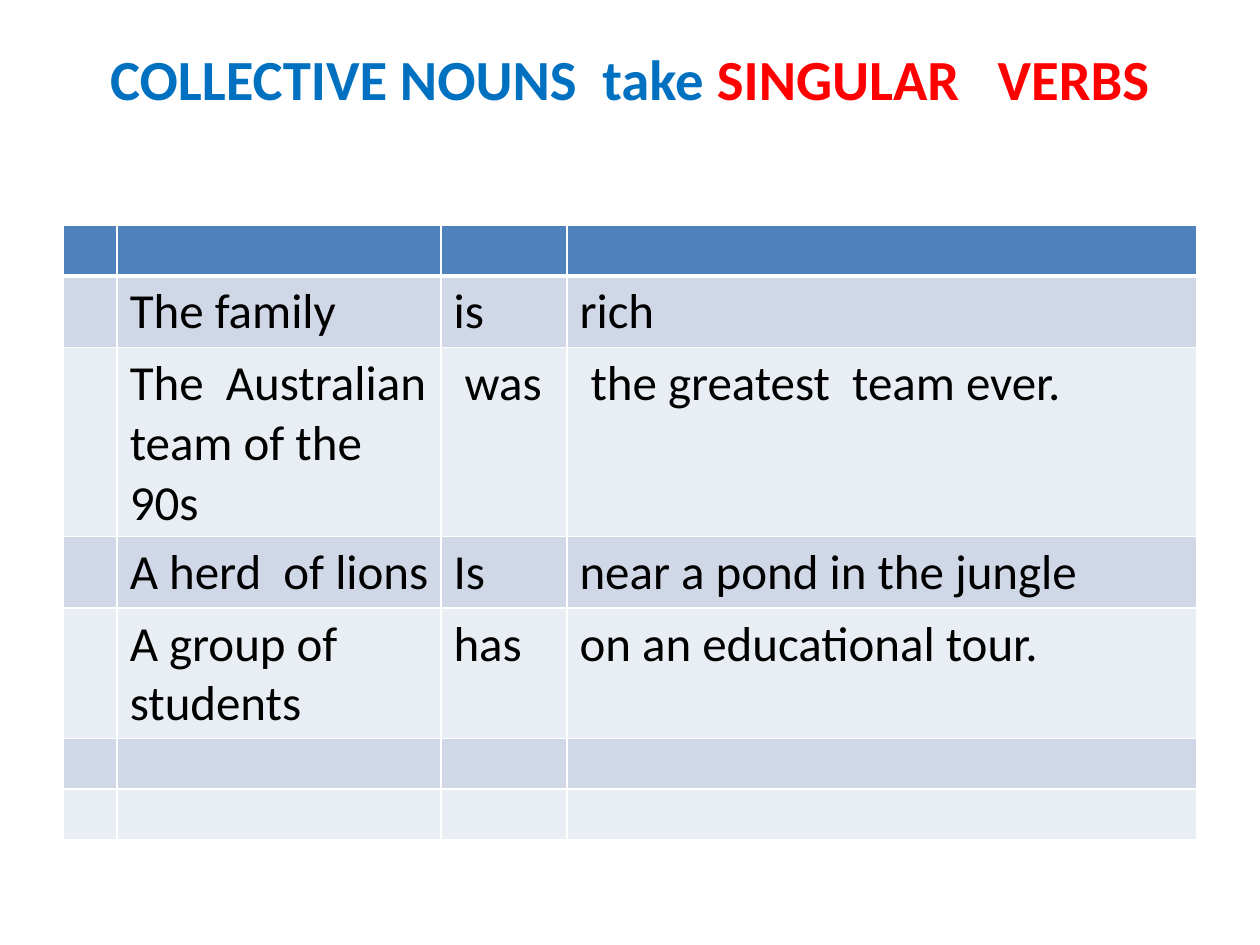
import pptx
import pptx.dml.color
import pptx.enum.text
import pptx.oxml
import pptx.oxml.ns
import pptx.util
from lxml import etree

Pt = pptx.util.Pt

COLOURS = {
    "subject": "0070C0",
    "verb": "FF0000",
    "header": "4F81BD",
    "odd": "D0D8E8",
    "even": "E9EDF4",
    "rule": "FFFFFF",
    "body": "000000",
}

SENTENCES = [
    ("The family", "is", "rich"),
    ("The  Australian team of the 90s", " was", " the greatest  team ever."),
    ("A herd  of lions", "Is", "near a pond in the jungle"),
    ("A group of students", "has", "on an educational tour."),
]


def add_text(paragraph, text, size=28, colour="body", bold=False, font="Calibri"):
    """Add one formatted run to a paragraph."""
    run = paragraph.add_run()
    run.text = text
    run.font.name = font
    run.font.size = Pt(size)
    run.font.bold = bold
    run.font.color.rgb = pptx.dml.color.RGBColor.from_string(COLOURS[colour])


class GrammarSlide:
    """Hold the style and the current slide."""

    def __init__(self, deck):
        """Start a slide on the blank layout."""
        self.slide = deck.slides.add_slide(deck.slide_layouts[6])
        self.rule_width = 1
        self.header_rule_width = 3

    def title(self, left, top, width, height, parts):
        """Add a centred heading of coloured parts."""
        heading = self.slide.shapes.add_textbox(Pt(left), Pt(top), Pt(width), Pt(height))
        frame = heading.text_frame
        frame.word_wrap = True
        frame.vertical_anchor = pptx.enum.text.MSO_ANCHOR.TOP
        line = frame.paragraphs[0]
        line.alignment = pptx.enum.text.PP_ALIGN.CENTER
        for words, colour in parts:
            add_text(line, words, size=32.4, colour=colour, bold=True)

    def border(self, cell, side, width):
        """Draw one side of a cell."""
        properties = cell._tc.get_or_add_tcPr()
        edge = etree.SubElement(properties, pptx.oxml.ns.qn(f"a:ln{side}"), w=str(Pt(width)))
        fill = etree.SubElement(edge, pptx.oxml.ns.qn("a:solidFill"))
        etree.SubElement(fill, pptx.oxml.ns.qn("a:srgbClr"), val=COLOURS["rule"])

    def cell(self, cell, row, text):
        """Fill, rule and write one cell."""
        widths = {side: self.rule_width for side in "LRTB"}
        if row == 0:
            widths["B"] = self.header_rule_width
        elif row == 1:
            widths["T"] = self.header_rule_width
        for side, width in widths.items():
            self.border(cell, side, width)
        band = "header" if row == 0 else "odd" if row % 2 else "even"
        cell.fill.solid()
        cell.fill.fore_color.rgb = pptx.dml.color.RGBColor.from_string(COLOURS[band])
        if text:
            add_text(cell.text_frame.paragraphs[0], text)

    def table(self, left, top, height, column_widths, row_height, rows):
        """Add a banded table."""
        frame = self.slide.shapes.add_table(
            len(rows), len(column_widths), Pt(left), Pt(top), Pt(sum(column_widths)), Pt(height)
        )
        grid = frame.table
        for column, width in zip(grid.columns, column_widths):
            column.width = Pt(width)
        for index, texts in enumerate(rows):
            grid.rows[index].height = Pt(row_height)
            for column, text in enumerate(texts):
                self.cell(grid.cell(index, column), index, text)
        frame.height = Pt(height)


def main():
    """Build and save the deck."""
    deck = pptx.Presentation()
    deck.slide_width, deck.slide_height = Pt(720), Pt(540)
    page = GrammarSlide(deck)
    page.title(36, 21.6, 648, 90, [
        ("COLLECTIVE NOUNS  take ", "subject"),
        ("SINGULAR   VERBS", "verb"),
    ])
    empty = ("",) * 4
    rows = [empty, *(("", *sentence) for sentence in SENTENCES), empty, empty]
    page.table(36, 128.9, 383.8, [31, 185, 72, 360], 26.6, rows)
    deck.save("out.pptx")


if __name__ == "__main__":
    main()
